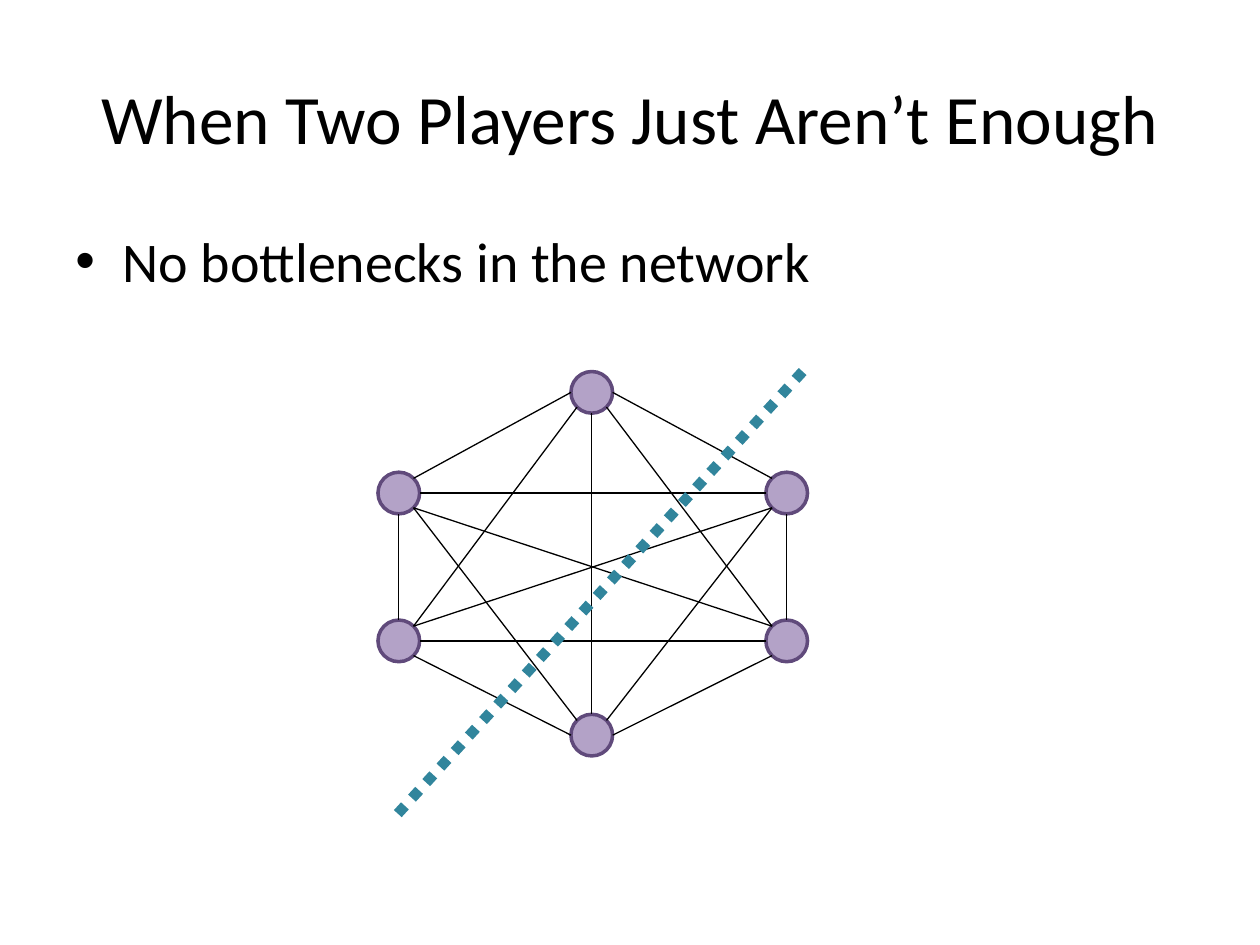
from math import sqrt

from lxml.etree import SubElement
from pptx import Presentation
from pptx.dml.color import RGBColor
from pptx.enum.dml import MSO_LINE
from pptx.enum.shapes import MSO_CONNECTOR, MSO_SHAPE
from pptx.enum.text import MSO_ANCHOR, PP_ALIGN
from pptx.oxml.ns import qn
from pptx.util import Cm, Pt

BLACK = RGBColor(0x00, 0x00, 0x00)
LILAC = RGBColor(0xB3, 0xA2, 0xC7)
PURPLE = RGBColor(0x60, 0x4A, 0x7B)
TEAL = RGBColor(0x31, 0x85, 0x9C)

# Node centres in cm
DIAMETER = 0.84
NODES = {
    "upper left": (8.04, 9.94),
    "lower left": (8.04, 12.92),
    "bottom": (11.93, 14.82),
    "top": (11.93, 7.91),
    "upper right": (15.86, 9.94),
    "lower right": (15.86, 12.92),
}

# Unit offsets from a node's centre to the points where edges attach
DIAGONAL = 1 / sqrt(2)
SITES = {
    "N": (0, -1), "S": (0, 1), "W": (-1, 0), "E": (1, 0),
    "NW": (-DIAGONAL, -DIAGONAL), "NE": (DIAGONAL, -DIAGONAL),
    "SW": (-DIAGONAL, DIAGONAL), "SE": (DIAGONAL, DIAGONAL),
}

# Every pair of players is linked: node, site, node, site
EDGES = [
    ("top", "W", "upper left", "NE"),
    ("lower left", "N", "upper left", "S"),
    ("bottom", "W", "lower left", "SE"),
    ("top", "E", "upper right", "NW"),
    ("upper right", "S", "lower right", "N"),
    ("lower right", "SW", "bottom", "E"),
    ("upper right", "W", "upper left", "E"),
    ("lower right", "W", "lower left", "E"),
    ("lower right", "NW", "upper left", "SE"),
    ("upper right", "SW", "lower left", "NE"),
    ("top", "S", "bottom", "N"),
    ("upper right", "SW", "bottom", "NE"),
    ("bottom", "NW", "upper left", "SE"),
    ("top", "SW", "lower left", "NE"),
    ("top", "SE", "lower right", "NW"),
]


def add_text(slide, text, top, height, size, anchor):
    box = slide.shapes.add_textbox(Cm(1.27), Cm(top), Cm(22.86), Cm(height))
    frame = box.text_frame
    frame.word_wrap = True
    frame.vertical_anchor = anchor
    paragraph = frame.paragraphs[0]
    paragraph.text = text
    paragraph.font.name = "Calibri"
    paragraph.font.size = Pt(size)
    paragraph.font.color.rgb = BLACK
    return paragraph


def add_bullet(paragraph):
    properties = paragraph._p.get_or_add_pPr()
    properties.set("marL", str(Cm(0.95)))
    properties.set("indent", str(-Cm(0.95)))
    # Bullet elements must come before the default run properties
    font = SubElement(properties, qn("a:buFont"), typeface="Arial")
    character = SubElement(properties, qn("a:buChar"), char="•")
    defaults = properties.find(qn("a:defRPr"))
    defaults.addprevious(font)
    defaults.addprevious(character)


def add_node(shapes, center):
    x, y = center
    radius = DIAMETER / 2
    node = shapes.add_shape(MSO_SHAPE.OVAL, Cm(x - radius), Cm(y - radius),
                            Cm(DIAMETER), Cm(DIAMETER))
    node.shadow.inherit = False
    node.fill.solid()
    node.fill.fore_color.rgb = LILAC
    node.line.color.rgb = PURPLE
    node.line.width = Pt(2)


def add_line(shapes, start, end, color, width):
    points = [Cm(value) for value in (*start, *end)]
    connector = shapes.add_connector(MSO_CONNECTOR.STRAIGHT, *points)
    connector.line.color.rgb = color
    connector.line.width = Pt(width)
    SubElement(connector._element.spPr, qn("a:effectLst"))
    return connector


def site_point(node, site):
    x, y = NODES[node]
    dx, dy = SITES[site]
    return x + dx * DIAMETER / 2, y + dy * DIAMETER / 2


def add_network(slide):
    group = slide.shapes.add_group_shape()
    for center in NODES.values():
        add_node(group.shapes, center)
    for first, first_site, second, second_site in EDGES:
        add_line(group.shapes, site_point(first, first_site),
                 site_point(second, second_site), BLACK, 0.75)


def main():
    presentation = Presentation()
    presentation.slide_width = Cm(25.4)
    presentation.slide_height = Cm(19.05)
    slide = presentation.slides.add_slide(presentation.slide_layouts[6])

    # Title and bullet
    title = add_text(slide, "When Two Players Just Aren’t Enough",
                     0.76, 3.18, 39.6, MSO_ANCHOR.MIDDLE)
    title.alignment = PP_ALIGN.CENTER
    bullet = add_text(slide, "No bottlenecks in the network",
                      4.45, 12.57, 32, MSO_ANCHOR.TOP)
    bullet.space_before = Pt(6.4)
    add_bullet(bullet)

    # Network and the cut through it
    add_network(slide)
    cut = add_line(slide.shapes, (16.18, 7.49), (7.92, 16.51), TEAL, 6)
    cut.line.dash_style = MSO_LINE.ROUND_DOT

    presentation.save("out.pptx")


if __name__ == "__main__":
    main()
